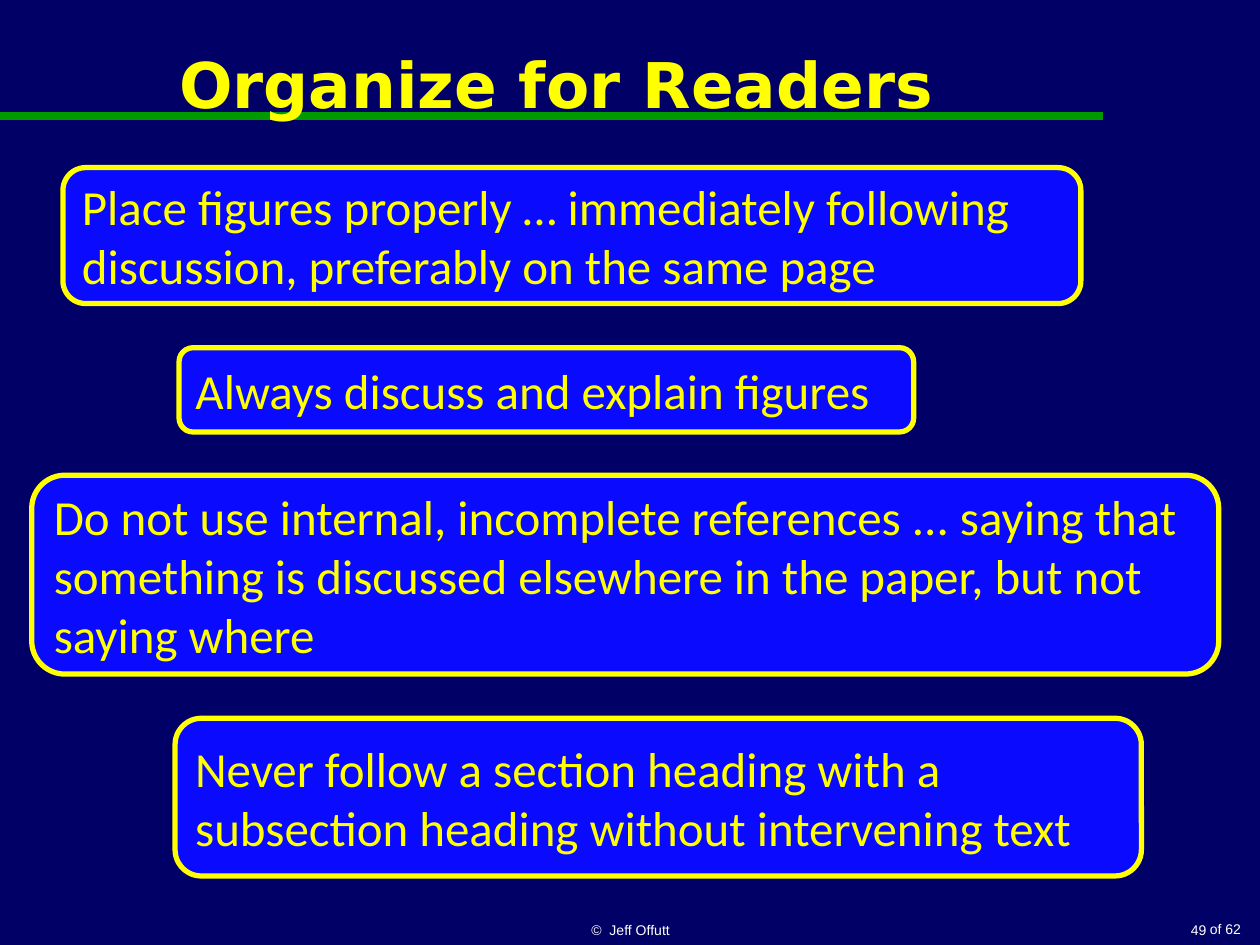
from lxml.etree import SubElement
from pptx import Presentation
from pptx.dml.color import RGBColor
from pptx.enum.shapes import MSO_CONNECTOR, MSO_SHAPE
from pptx.enum.text import MSO_ANCHOR, PP_ALIGN
from pptx.oxml.ns import qn
from pptx.util import Cm, Pt

COLORS = {
    "background": "000066",
    "rule": "009900",
    "box": "0A0AFF",
    "accent": "FFFF00",
    "footer": "FFFFFF",
}
FORMATS = {
    "title": {"name": "DejaVu Sans", "size": Pt(36), "bold": True},
    "box": {"name": "Calibri", "size": Pt(28)},
    "footer": {"name": "Arial", "size": Pt(8)},
}
ADVICE = [
    ((1.27, 3.38, 20.52, 2.74),
     "Place figures properly … immediately following discussion, "
     "preferably on the same page"),
    ((3.61, 7.01, 14.81, 1.7), "Always discuss and explain figures"),
    ((0.64, 9.58, 23.93, 4.01),
     "Do not use internal, incomplete references ... saying that something "
     "is discussed elsewhere in the paper, but not saying where"),
    ((3.53, 14.48, 19.48, 3.18),
     "Never follow a section heading with a subsection heading "
     "without intervening text"),
]


def color(name):
    return RGBColor.from_string(COLORS[name])


class SlideBuilder:
    """Holds the style and the slide being filled; lengths are in cm."""

    def __init__(self, slide):
        self.slide = slide
        self.line_width = Pt(3)
        self.rule_width = Pt(4.5)

    def background(self):
        fill = self.slide.background.fill
        fill.solid()
        fill.fore_color.rgb = color("background")

    def rule(self, left, right, top):
        connector = self.slide.shapes.add_connector(
            MSO_CONNECTOR.STRAIGHT, Cm(left), Cm(top), Cm(right), Cm(top))
        connector.line.color.rgb = color("rule")
        connector.line.width = self.rule_width
        SubElement(connector._element.spPr, qn("a:effectLst"))

    def set_text(self, shape, text, style, text_color, alignment, anchor, wrap=True):
        frame = shape.text_frame
        frame.word_wrap = wrap
        frame.vertical_anchor = anchor
        paragraph = frame.paragraphs[0]
        paragraph.alignment = alignment
        run = paragraph.add_run()
        run.text = text
        for attribute, value in FORMATS[style].items():
            setattr(run.font, attribute, value)
        run.font.color.rgb = color(text_color)

    def label(self, position, *text_options, **options):
        textbox = self.slide.shapes.add_textbox(*map(Cm, position))
        self.set_text(textbox, *text_options, **options)

    def title(self, position, text):
        self.label(position, text, "title", "accent", PP_ALIGN.CENTER, MSO_ANCHOR.MIDDLE)

    def footer(self, position, text, alignment, anchor=MSO_ANCHOR.BOTTOM, wrap=True):
        self.label(position, text, "footer", "footer", alignment, anchor, wrap=wrap)

    def box(self, position, text):
        shape = self.slide.shapes.add_shape(
            MSO_SHAPE.ROUNDED_RECTANGLE, *map(Cm, position))
        shape.shadow.inherit = False
        shape.fill.solid()
        shape.fill.fore_color.rgb = color("box")
        shape.line.color.rgb = color("accent")
        shape.line.width = self.line_width
        self.set_text(shape, text, "box", "accent", PP_ALIGN.LEFT, MSO_ANCHOR.MIDDLE)


def main():
    presentation = Presentation()
    presentation.slide_width = Cm(25.4)
    presentation.slide_height = Cm(19.05)
    builder = SlideBuilder(
        presentation.slides.add_slide(presentation.slide_layouts[6]))

    builder.background()
    builder.rule(0, 22.23, 2.34)
    builder.footer((24.13, 18.44, 1.14, 0.61), "of 62", PP_ALIGN.RIGHT,
                   MSO_ANCHOR.TOP, wrap=False)
    builder.title((0.2, 0, 22.02, 3.38), "Organize for Readers")
    builder.footer((8.69, 18.21, 8.05, 0.84), "©  Jeff Offutt", PP_ALIGN.CENTER)
    builder.footer((20.12, 18.21, 4.45, 0.84), "49", PP_ALIGN.RIGHT)
    for position, text in ADVICE:
        builder.box(position, text)

    presentation.save("out.pptx")


if __name__ == "__main__":
    main()
